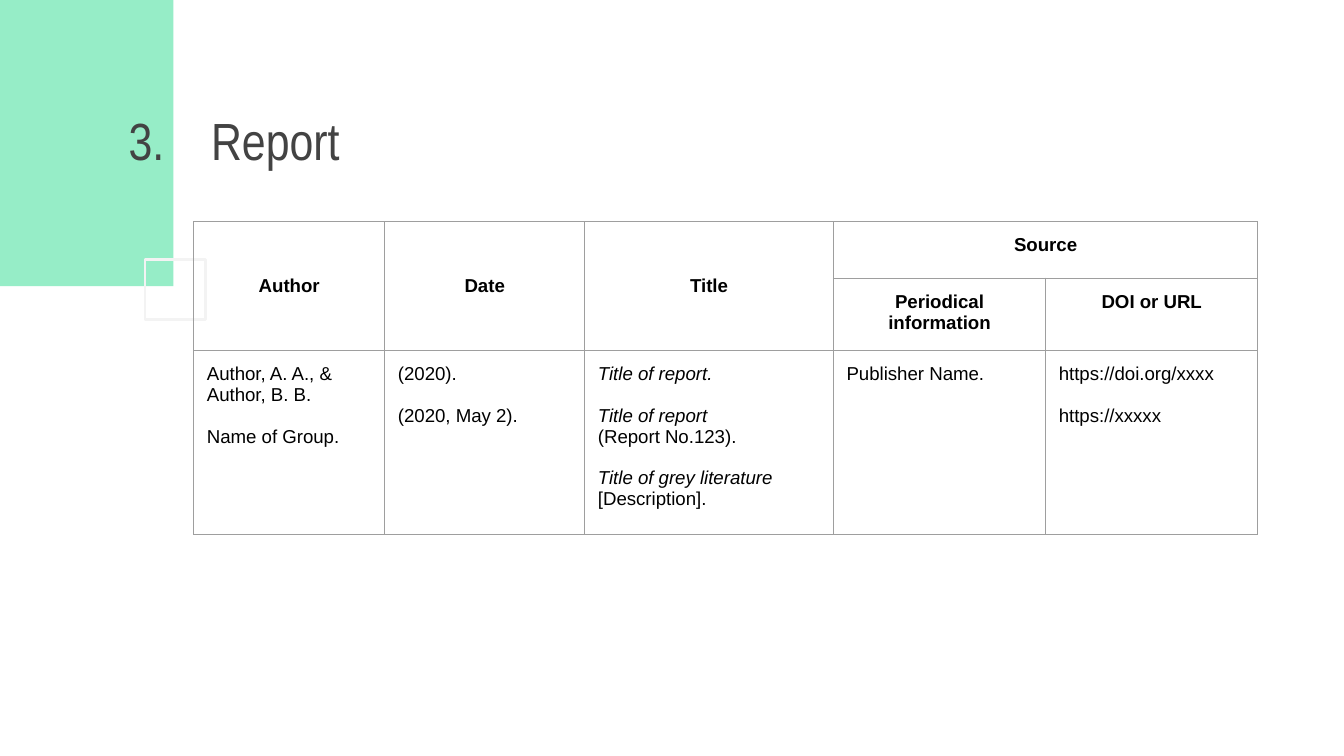
from dataclasses import dataclass

from lxml import etree
from pptx import Presentation
from pptx import util as u
from pptx.dml import color
from pptx.enum import shapes, text
from pptx.oxml import ns

INSETS = {side: u.Cm(0.25) for side in
          ("margin_left", "margin_top", "margin_right", "margin_bottom")}


@dataclass
class Line:
    words: str
    italic: bool = False
    gap: bool = False  # a line's height of space above


@dataclass
class Entry:
    row: int
    column: int
    lines: list[Line]
    rows: int = 1
    columns: int = 1
    heading: bool = False


def rgb(value: str) -> color.RGBColor:
    return color.RGBColor.from_string(value)


def set_format(target, values: dict) -> None:
    for name, value in values.items():
        setattr(target, name, value)


def add_box(page, left: float, top: float, width: float, height: float):
    box = page.shapes.add_shape(shapes.MSO_SHAPE.RECTANGLE, u.Cm(left),
                                u.Cm(top), u.Cm(width), u.Cm(height))
    box.shadow.inherit = False
    return box


def add_borders(cell, line_color: str, points: float) -> None:
    properties = cell._tc.get_or_add_tcPr()
    for side in ("lnL", "lnR", "lnT", "lnB"):
        line = etree.SubElement(properties, ns.qn(f"a:{side}"),
                                w=str(u.Pt(points)))
        fill = etree.SubElement(line, ns.qn("a:solidFill"))
        etree.SubElement(fill, ns.qn("a:srgbClr"), val=line_color)


def fill_entry(table, entry: Entry) -> None:
    cell = table.cell(entry.row, entry.column)
    if entry.rows > 1 or entry.columns > 1:
        cell.merge(table.cell(entry.row + entry.rows - 1,
                              entry.column + entry.columns - 1))
    set_format(cell, INSETS)
    cell.vertical_anchor = (text.MSO_ANCHOR.MIDDLE if entry.rows > 1
                            else text.MSO_ANCHOR.TOP)
    frame = cell.text_frame
    for index, line in enumerate(entry.lines):
        para = frame.add_paragraph() if index else frame.paragraphs[0]
        para.alignment = (text.PP_ALIGN.CENTER if entry.heading
                          else text.PP_ALIGN.LEFT)
        if line.gap:
            para.space_before = u.Pt(11)
        span = para.add_run()
        span.text = line.words
        set_format(span.font, {"name": "Arial", "size": u.Pt(10),
                               "bold": entry.heading, "italic": line.italic})
        span.font.color.rgb = rgb("000000")


ENTRIES = [
    # Headings
    Entry(0, 0, [Line("Author")], rows=2, heading=True),
    Entry(0, 1, [Line("Date")], rows=2, heading=True),
    Entry(0, 2, [Line("Title")], rows=2, heading=True),
    Entry(0, 3, [Line("Source")], columns=2, heading=True),
    Entry(1, 3, [Line("Periodical"), Line("information")], heading=True),
    Entry(1, 4, [Line("DOI or URL")], heading=True),
    # Reference patterns
    Entry(2, 0, [Line("Author, A. A., &"), Line("Author, B. B."),
                 Line("Name of Group.", gap=True)]),
    Entry(2, 1, [Line("(2020)."), Line("(2020, May 2).", gap=True)]),
    Entry(2, 2, [Line("Title of report.", italic=True),
                 Line("Title of report", italic=True, gap=True),
                 Line("(Report No.123)."),
                 Line("Title of grey literature", italic=True, gap=True),
                 Line("[Description].")]),
    Entry(2, 3, [Line("Publisher Name.")]),
    Entry(2, 4, [Line("https://doi.org/xxxx"),
                 Line("https://xxxxx", gap=True)]),
]
COLUMN_WIDTHS = [3.61, 3.78, 4.7, 4.01, 4.01]
ROW_HEIGHTS = [1.07, 1.37, 3.48]


def main() -> None:
    deck = Presentation()
    set_format(deck, {"slide_width": u.Cm(25.4), "slide_height": u.Cm(14.29)})
    page = deck.slides.add_slide(deck.slide_layouts[5])
    title = page.shapes.title

    # Corner decoration, behind the title
    block = add_box(page, 0, 0, 3.28, 5.41)
    block.fill.solid()
    block.fill.fore_color.rgb = rgb("96EDC7")
    block.line.fill.background()
    square = add_box(page, 2.74, 4.9, 1.14, 1.14)
    square.fill.background()
    square.line.color.rgb = rgb("F3F3F3")
    square.line.width = u.Pt(1.5)
    for box in (block, square):
        title.element.addprevious(box.element)

    # Title: number hanging to the left of the heading
    set_format(title, {"left": u.Cm(2.18), "top": u.Cm(1.75),
                       "width": u.Cm(7.47), "height": u.Cm(1.78)})
    frame = title.text_frame
    set_format(frame, INSETS | {"word_wrap": True,
                                "auto_size": text.MSO_AUTO_SIZE.NONE,
                                "vertical_anchor": text.MSO_ANCHOR.MIDDLE})
    para = frame.paragraphs[0]
    para.alignment = text.PP_ALIGN.LEFT
    hanging = u.Cm(1.56)
    indents = para._p.get_or_add_pPr()
    indents.set("marL", str(hanging))
    indents.set("indent", str(-hanging))
    span = para.add_run()
    span.text = "3.\tReport"
    set_format(span.font, {"name": "Arial Narrow", "size": u.Pt(28)})
    span.font.color.rgb = rgb("434343")

    # Table
    table = page.shapes.add_table(
        len(ROW_HEIGHTS), len(COLUMN_WIDTHS), u.Cm(3.66), u.Cm(4.19),
        u.Cm(sum(COLUMN_WIDTHS)), u.Cm(sum(ROW_HEIGHTS))).table
    set_format(table, {"first_row": False, "horz_banding": False})
    for column, width in zip(table.columns, COLUMN_WIDTHS):
        column.width = u.Cm(width)
    for row, height in zip(table.rows, ROW_HEIGHTS):
        row.height = u.Cm(height)
    for cell in table.iter_cells():
        add_borders(cell, "9E9E9E", 0.75)
        cell.fill.background()
    for entry in ENTRIES:
        fill_entry(table, entry)

    deck.save("out.pptx")


if __name__ == "__main__":
    main()
